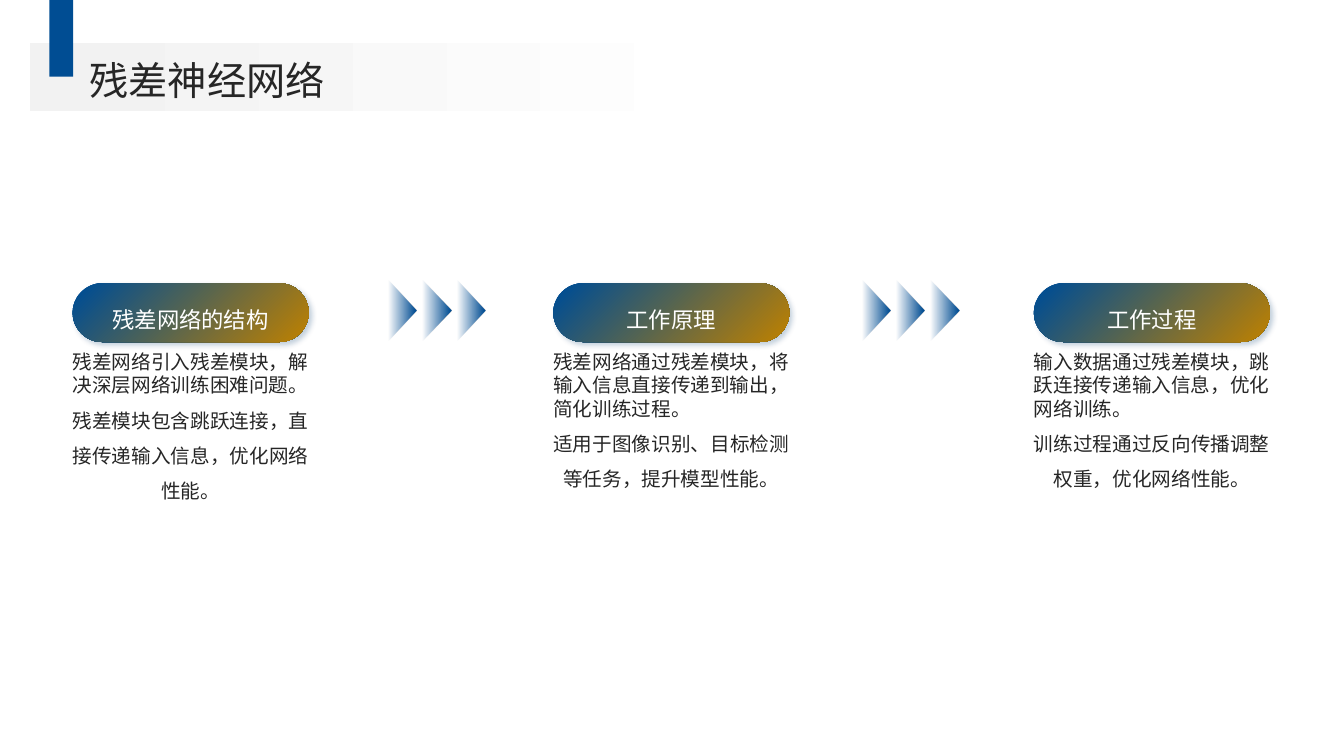
from lxml import etree
from pptx import Presentation
from pptx.dml.color import RGBColor
from pptx.enum.shapes import MSO_SHAPE
from pptx.enum.text import MSO_ANCHOR, MSO_AUTO_SIZE, PP_ALIGN
from pptx.oxml import parse_xml
from pptx.oxml.ns import nsdecls, qn
from pptx.util import Pt

RECT, PILL, TRIANGLE = MSO_SHAPE.RECTANGLE, MSO_SHAPE.ROUNDED_RECTANGLE, MSO_SHAPE.ISOSCELES_TRIANGLE
LEFT, CENTER = PP_ALIGN.LEFT, PP_ALIGN.CENTER
TOP, MIDDLE = MSO_ANCHOR.TOP, MSO_ANCHOR.MIDDLE
NO_FIT = MSO_AUTO_SIZE.NONE
FONT = "Noto Sans CJK SC"
BLUE, GOLD, DARK, WHITE, GREY = "004D93", "BF8100", "262626", "FFFFFF", "F2F2F2"
STEPS = [
    ("残差网络的结构", "残差网络引入残差模块，解决深层网络训练困难问题。",
     "残差模块包含跳跃连接，直接传递输入信息，优化网络性能。"),
    ("工作原理", "残差网络通过残差模块，将输入信息直接传递到输出，简化训练过程。",
     "适用于图像识别、目标检测等任务，提升模型性能。"),
    ("工作过程", "输入数据通过残差模块，跳跃连接传递输入信息，优化网络训练。",
     "训练过程通过反向传播调整权重，优化网络性能。"),
]


def color(code):
    """Return the colour for a hex string."""
    return RGBColor.from_string(code)


def write(frame, lines, size, code, anchor):
    """Fill a text frame with (text, alignment, line spacing) paragraphs."""
    frame.word_wrap = True
    frame.auto_size = NO_FIT
    frame.vertical_anchor = anchor
    frame.margin_left = frame.margin_right = frame.margin_top = frame.margin_bottom = 0
    for index, (text, align, spacing) in enumerate(lines):
        para = frame.add_paragraph() if index else frame.paragraphs[0]
        para.text = text
        para.alignment = align
        para.line_spacing = spacing
        para.font.size = Pt(size)
        para.font.color.rgb = color(code)
        para.font.name = FONT
        latin = para._p.pPr.find(".//" + qn("a:latin"))
        east = etree.Element(qn("a:ea"), typeface=FONT)
        latin.addnext(east)


def add_shape(slide, kind, box):
    """Add a preset shape without line or shadow."""
    shape = slide.shapes.add_shape(kind, *map(Pt, box))
    shape.shadow.inherit = False
    shape.line.fill.background()
    return shape


def shade(shape, stops, angle):
    """Give a shape a two-stop gradient turned clockwise by angle."""
    shape.fill.gradient()
    shape.fill.gradient_angle = -angle % 360
    for stop, (place, code) in zip(shape.fill.gradient_stops, stops):
        stop.position = place
        stop.color.rgb = color(code)


def add_header(slide, left, top):
    """Place the title, its pale band and the blue tab."""
    band = add_shape(slide, RECT, (left, top, 593.3, 48.2))
    shade(band, [(0.05, GREY), (0.84, WHITE)], 0)
    tab = add_shape(slide, RECT, (left + 13.7, 0, 17, 54.7))
    tab.fill.solid()
    tab.fill.fore_color.rgb = color(BLUE)
    title = slide.shapes.title
    title.left, title.top, title.width, title.height = map(Pt, (left + 42.5, top + 5.7, 842.4, 36.7))
    write(title.text_frame, [("残差神经网络", LEFT, 1.1)], 28, DARK, MIDDLE)
    tab._element.addnext(title._element)


def add_step(slide, left, top, width, step):
    """Place one heading pill with its text below."""
    name, intro, detail = step
    body = slide.shapes.add_textbox(*map(Pt, (left, top + 47.5, width, 206.6)))
    write(body.text_frame, [(intro, LEFT, 1.0), (detail, CENTER, 1.5)], 14, DARK, TOP)
    pill = add_shape(slide, PILL, (left, top, width, 42))
    pill.adjustments[0] = 0.5
    shade(pill, [(0.04, BLUE), (1, GOLD)], 45)
    effects = pill._element.spPr.find(qn("a:effectLst"))
    effects.append(parse_xml(
        f'<a:outerShdw {nsdecls("a")} blurRad="{Pt(4)}" dist="{Pt(3)}" dir="2700000" algn="tl" '
        'rotWithShape="0"><a:srgbClr val="003A6E"><a:alpha val="23000"/></a:srgbClr></a:outerShdw>'))
    write(pill.text_frame, [(name, CENTER, 1.5)], 16, WHITE, MIDDLE)


def add_arrows(slide, left, middle):
    """Place three fading triangles that point right."""
    base, depth = 49.6, 23
    for index in range(3):
        center = left + 24.5 * index
        arrow = add_shape(slide, TRIANGLE, (center - base / 2, middle - depth / 2, base, depth))
        arrow.rotation = 90
        shade(arrow, [(0.04, BLUE), (0.88, BLUE)], 90)
        last = arrow._element.spPr.findall(".//" + qn("a:srgbClr"))[-1]
        etree.SubElement(last, qn("a:alpha"), val="0")


def main():
    """Build and save the slide."""
    deck = Presentation()
    deck.slide_width, deck.slide_height = Pt(960), Pt(540)
    slide = deck.slides.add_slide(deck.slide_layouts[5])
    for index, step in enumerate(STEPS):
        add_step(slide, 51.9 + 343.3 * index, 202.3, 168.6, step)
    for index in range(2):
        add_arrows(slide, 286.2 + 338.4 * index, 221.7)
    add_header(slide, 21.6, 31)
    deck.save("out.pptx")


if __name__ == "__main__":
    main()
